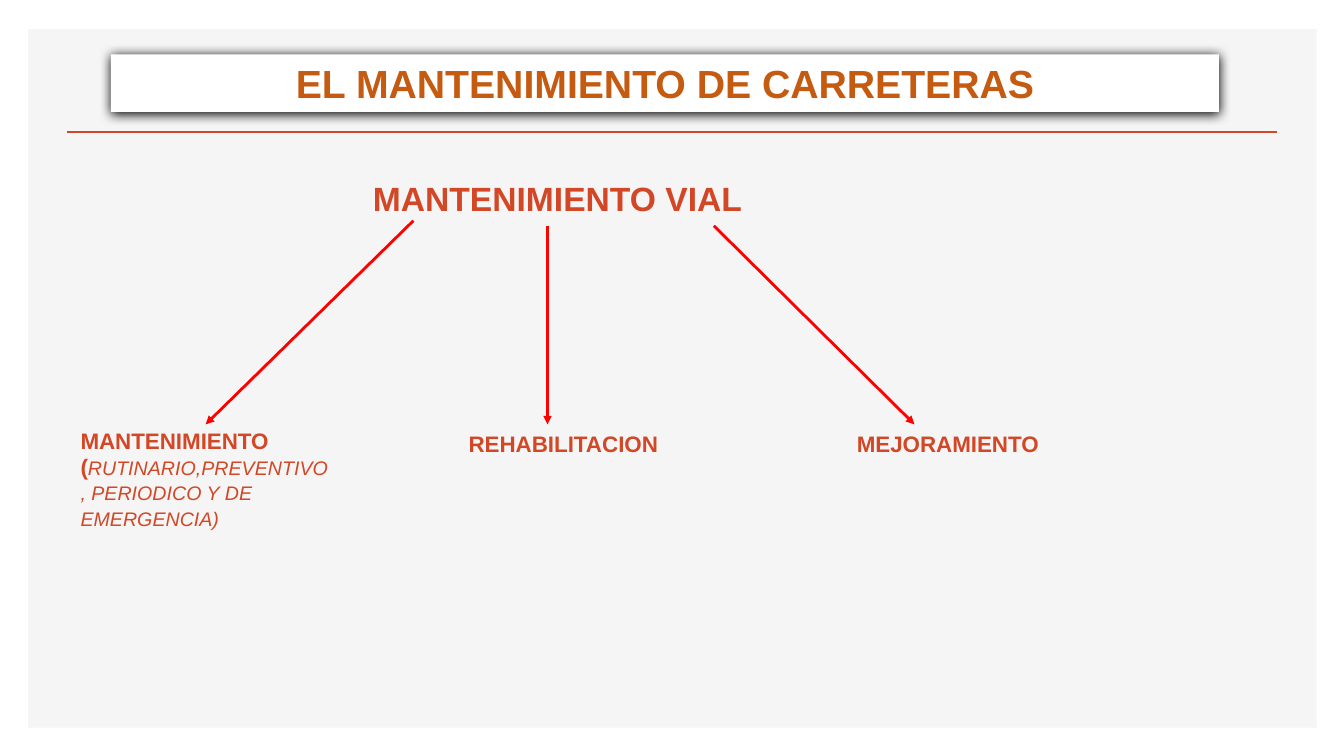
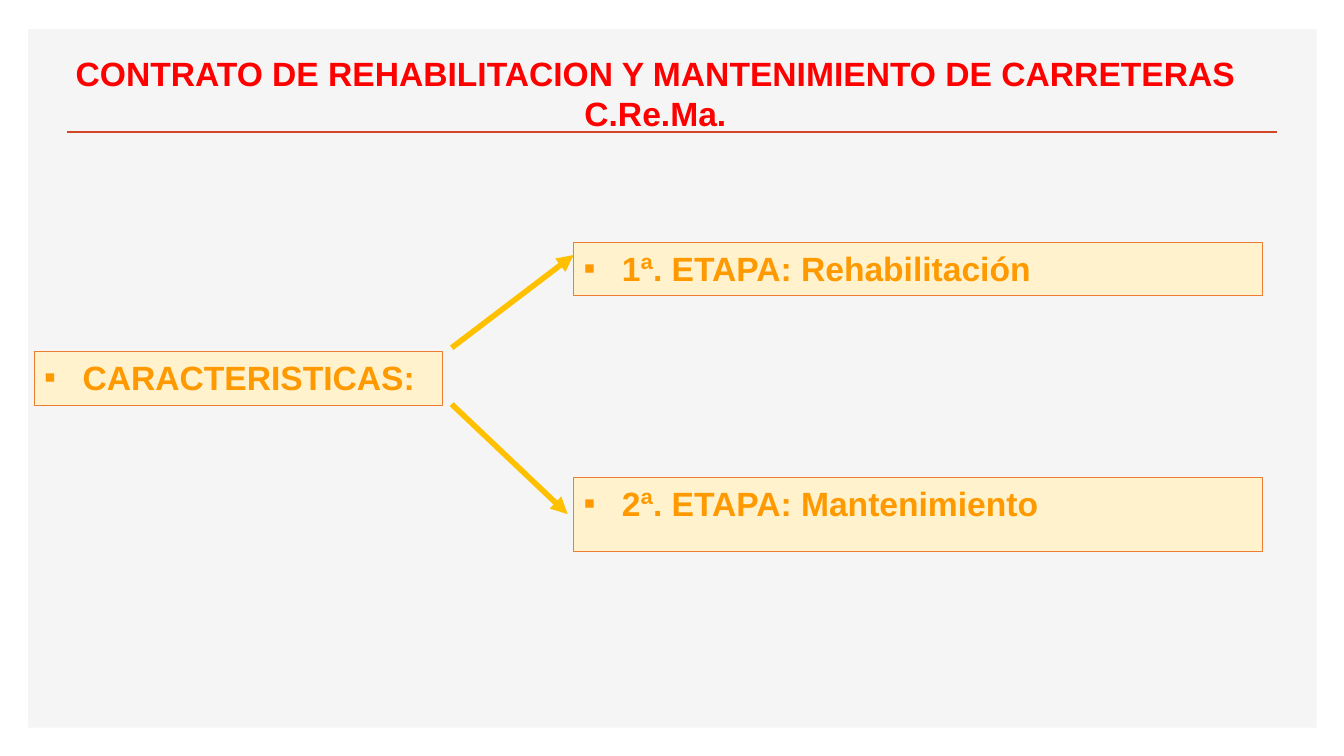
from lxml import etree
from pptx import Presentation
from pptx.dml.color import RGBColor
from pptx.enum import shapes, text
from pptx.oxml import ns
from pptx.util import Inches, Pt

FONT = "Arial"
WHITE = RGBColor(0xFF, 0xFF, 0xFF)
PANEL = RGBColor(0xF5, 0xF5, 0xF5)
BRICK = RGBColor(0xD2, 0x47, 0x26)
BROWN = RGBColor(0xC5, 0x5A, 0x11)
RED = RGBColor(0xFF, 0x00, 0x00)
CREAM = RGBColor(0xFF, 0xF2, 0xCC)
BORDER = RGBColor(0xED, 0x7D, 0x31)
ORANGE = RGBColor(0xFF, 0x99, 0x00)
GOLD = RGBColor(0xFF, 0xC0, 0x00)


def add_child(parent, tag, **attributes):
    return etree.SubElement(parent, ns.qn(tag), attributes)


def style(para, size, color, bold=True):
    para.font.name = FONT
    para.font.size = Pt(size)
    para.font.bold = bold
    para.font.color.rgb = color


def add_rectangle(page, bounds, fill, border=None):
    box = page.shapes.add_shape(shapes.MSO_SHAPE.RECTANGLE, *map(Inches, bounds))
    box.shadow.inherit = False
    box.fill.solid()
    box.fill.fore_color.rgb = fill
    if border is None:
        box.line.fill.background()
    else:
        box.line.color.rgb = border
        box.line.width = Pt(0.75)
    return box


def add_line(page, start, end, color, width, arrow=False):
    line = page.shapes.add_connector(
        shapes.MSO_CONNECTOR.STRAIGHT, *map(Inches, start + end))
    line.line.color.rgb = color
    line.line.width = Pt(width)
    if arrow:
        add_child(line.line._get_or_add_ln(), "a:tailEnd", type="triangle")
    add_child(line._element.spPr, "a:effectLst")
    return line


def add_backdrop(page):
    """Draw the panel and rule, then move them to the layout all slides share."""
    panel = add_rectangle(page, (0.28, 0.29, 12.78, 6.93), PANEL)
    rule = add_line(page, (0.66, 1.31), (12.67, 1.31), BRICK, 2)
    tree = page.slide_layout.shapes._spTree
    for position, part in enumerate((panel, rule), start=2):
        tree.insert(position, part._element)


def set_title(page, bounds, lines, size, color, anchor):
    title = page.shapes.title
    title.left, title.top, title.width, title.height = map(Inches, bounds)
    frame = title.text_frame
    frame.text = "\n".join(lines)
    frame.auto_size = text.MSO_AUTO_SIZE.NONE
    frame.vertical_anchor = anchor
    for para in frame.paragraphs:
        para.alignment = text.PP_ALIGN.CENTER
        style(para, size, color)
    return title


def make_banner(title):
    """Give the title a white fill and a soft black shadow."""
    title.fill.solid()
    title.fill.fore_color.rgb = WHITE
    effects = add_child(title._element.spPr, "a:effectLst")
    shadow = add_child(effects, "a:outerShdw", blurRad=str(Pt(8.5)),
                       dist=str(Pt(1)), dir="5400000", algn="t", rotWithShape="0")
    add_child(shadow, "a:srgbClr", val="000000")


def add_label(page, bounds, words, size, detail=None):
    box = page.shapes.add_textbox(*map(Inches, bounds))
    box.text_frame.word_wrap = True
    para = box.text_frame.paragraphs[0]
    para.line_spacing = Pt(18)
    para.add_run().text = words
    style(para, size, BRICK)
    if detail:
        span = para.add_run()
        span.text = detail
        span.font.size = Pt(14)
        span.font.bold = False
        span.font.italic = True


def add_bullet_box(page, bounds, words):
    box = add_rectangle(page, bounds, CREAM, BORDER)
    frame = box.text_frame
    frame.vertical_anchor = text.MSO_ANCHOR.TOP
    para = frame.paragraphs[0]
    para.text = words
    para.alignment = text.PP_ALIGN.LEFT
    properties = para._p.get_or_add_pPr()
    properties.set("marL", str(Inches(0.38)))
    properties.set("indent", str(Inches(-0.38)))
    add_child(properties, "a:buFont", typeface=FONT)
    add_child(properties, "a:buChar", char="▪")
    style(para, 24, ORANGE)


def build_maintenance(page):
    title = set_title(page, (1.1, 0.54, 10.99, 0.57),
                      ["EL MANTENIMIENTO DE CARRETERAS"], 28, BROWN,
                      text.MSO_ANCHOR.MIDDLE)
    make_banner(title)
    add_label(page, (3.6, 1.87, 4.31, 0.32), "MANTENIMIENTO VIAL", 24)
    add_label(page, (0.7, 4.21, 2.69, 1.17), "MANTENIMIENTO (", 16,
              "RUTINARIO,PREVENTIVO, PERIODICO Y DE EMERGENCIA)")
    for left, words in ((4.55, "REHABILITACION"), (8.4, "MEJORAMIENTO")):
        add_label(page, (left, 4.23, 2.34, 0.45), words, 16)
    for start, end_x in (((4.1, 2.19), 2.04), ((5.43, 2.24), 5.43),
                         ((7.08, 2.24), 9.07)):
        add_line(page, start, (end_x, 4.21), RED, 2, arrow=True)


def build_contract(page):
    title = set_title(page, (0.59, 0.47, 11.82, 0.91),
                      ["CONTRATO DE REHABILITACION Y MANTENIMIENTO DE CARRETERAS",
                       "C.Re.Ma."], 24, RED, text.MSO_ANCHOR.TOP)
    title.text_frame.word_wrap = False
    add_bullet_box(page, (0.34, 3.49, 4.05, 0.53), "CARACTERISTICAS:")
    stages = (
        ("1ª. ETAPA: Rehabilitación", 2.41, 0.52, (4.48, 3.45), (5.69, 2.53)),
        ("2ª. ETAPA: Mantenimiento", 4.74, 0.73, (4.48, 4.01), (5.63, 5.1)),
    )
    for words, top, height, start, end in stages:
        add_bullet_box(page, (5.69, top, 6.83, height), words)
        add_line(page, start, end, GOLD, 4, arrow=True)


def main():
    deck = Presentation()
    deck.slide_width, deck.slide_height = Inches(13.33), Inches(7.5)
    title_only = deck.slide_layouts[5]
    pages = [deck.slides.add_slide(title_only) for _ in range(2)]
    add_backdrop(pages[0])
    build_maintenance(pages[0])
    build_contract(pages[1])
    deck.save("out.pptx")


if __name__ == "__main__":
    main()
